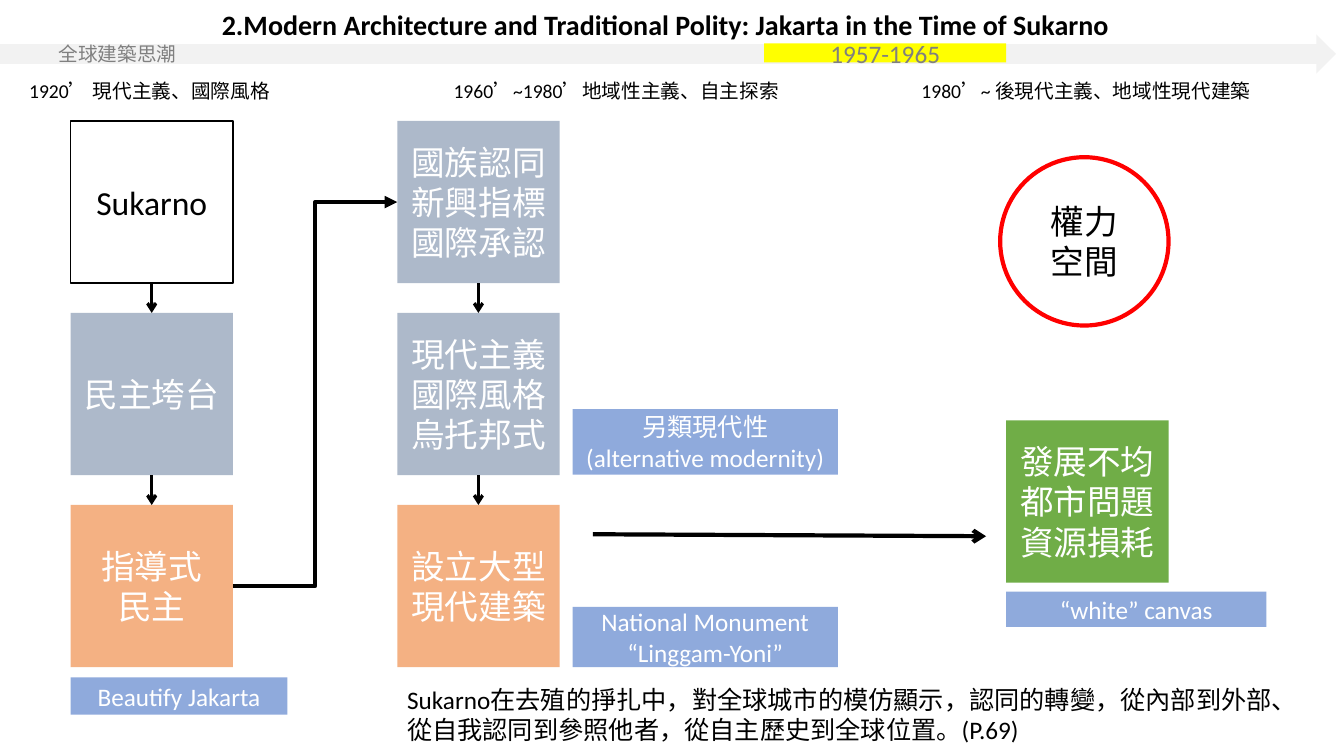
from lxml.etree import SubElement
from pptx import Presentation
from pptx.dml.color import RGBColor
from pptx.enum.shapes import MSO_CONNECTOR, MSO_SHAPE
from pptx.enum.text import MSO_ANCHOR, MSO_AUTO_SIZE, PP_ALIGN
from pptx.oxml.ns import qn
from pptx.util import Inches, Pt

COLORS = {
    "black": "000000", "white": "FFFFFF", "grey": "808080", "band": "F2F2F2",
    "yellow": "FFFF00", "slate": "ADB9CA", "orange": "F4B183",
    "green": "70AD47", "blue": "8FAADC", "red": "FF0000",
}

# Grid of square boxes, in inches
BOX, GAP = 1.61, 0.295
COLS = [0.7, 3.94, 9.98]
ROWS = [1.2 + i * (BOX + GAP) for i in range(3)]
NOTE_X = 5.68
NOTE_W = 2.63
BOTTOM, TOP, LEFT, RIGHT = 2, 0, 1, 3


def rgb(name):
    return RGBColor.from_string(COLORS[name])


def apply(obj, formats):
    for name, value in formats.items():
        setattr(obj, name, value)


def write(tf, lines, size, color, align=PP_ALIGN.LEFT, bold=False, **frame):
    """Fill a text frame, one paragraph per line."""
    apply(tf, {"word_wrap": True, **frame})
    for i, line in enumerate(lines.split("\n")):
        p = tf.paragraphs[0] if i == 0 else tf.add_paragraph()
        p.alignment = align
        r = p.add_run()
        r.text = line
        apply(r.font, {"name": "Calibri", "size": Pt(size), "bold": bold})
        r.font.color.rgb = rgb(color)


def add_block(slide, at, text, fill=None, line=None, width=1, size=24,
              color="white", kind=MSO_SHAPE.RECTANGLE,
              align=PP_ALIGN.CENTER, **frame):
    sp = slide.shapes.add_shape(kind, *map(Inches, at))
    sp.shadow.inherit = False
    if fill:
        sp.fill.solid()
        sp.fill.fore_color.rgb = rgb(fill)
    else:
        sp.fill.background()
    if line:
        sp.line.color.rgb = rgb(line)
        sp.line.width = Pt(width)
    else:
        sp.line.fill.background()
    write(sp.text_frame, text, size, color, align,
          vertical_anchor=MSO_ANCHOR.MIDDLE, **frame)
    return sp


def add_box(slide, col, top, text, fill=None, **style):
    return add_block(slide, (COLS[col], top, BOX, BOX), text, fill, **style)


def add_note(slide, at, text):
    return add_block(slide, at, text, "blue", size=18)


def add_label(slide, at, text, size):
    sp = slide.shapes.add_textbox(*map(Inches, at))
    write(sp.text_frame, text, size, "black")


def add_arrow(slide, start=(0, 0), end=(0, 0), width=2.25, head="arrow",
              kind=MSO_CONNECTOR.STRAIGHT):
    cx = slide.shapes.add_connector(kind, *map(Inches, (*start, *end)))
    cx.line.color.rgb = rgb("black")
    cx.line.width = Pt(width)
    SubElement(cx.line._get_or_add_ln(), qn("a:tailEnd"), type=head)
    SubElement(cx._element.spPr, qn("a:effectLst"))
    return cx


def join(slide, first, site, second, end_site, **style):
    cx = add_arrow(slide, **style)
    cx.begin_connect(first, site)
    cx.end_connect(second, end_site)


def add_title(slide, text):
    sp = slide.shapes.title
    apply(sp, {"left": Inches(2.1), "top": Inches(0.02),
               "width": Inches(9.14), "height": Inches(0.44)})
    write(sp.text_frame, text, 20, "black", bold=True, word_wrap=False,
          auto_size=MSO_AUTO_SIZE.NONE, vertical_anchor=MSO_ANCHOR.TOP)


def add_timeline(slide):
    add_block(slide, (0, 0.34, 13.25, 0.39), "全球建築思潮", "band", size=14,
              color="grey", kind=MSO_SHAPE.RIGHT_ARROW,
              align=PP_ALIGN.LEFT, margin_left=Inches(0.58))
    for left, width, text in [
        (0.19, 3.12, "1920’ 現代主義、國際風格"),
        (4.4, 4.02, "1960’~1980’地域性主義、自主探索"),
        (9.04, 4.21, "1980’~ 後現代主義、地域性現代建築"),
    ]:
        add_label(slide, (left, 0.73, width, 0.34), text, 14)
    add_block(slide, (7.58, 0.43, 2.4, 0.19), "1957-1965", "yellow",
              size=18, color="grey")


def add_flow(slide):
    # Two columns of three boxes, each column joined downwards
    columns = [
        [("Sukarno", None, {"line": "black", "color": "black"}),
         ("民主垮台", "slate", {}),
         ("指導式\n民主", "orange", {})],
        [("國族認同\n新興指標\n國際承認", "slate", {}),
         ("現代主義\n國際風格\n烏托邦式", "slate", {}),
         ("設立大型\n現代建築", "orange", {})],
    ]
    boxes = [[add_box(slide, col, top, text, fill, **style)
              for top, (text, fill, style) in zip(ROWS, column)]
             for col, column in enumerate(columns)]
    for column in boxes:
        for upper, lower in zip(column, column[1:]):
            join(slide, upper, BOTTOM, lower, TOP)
    join(slide, boxes[0][-1], RIGHT, boxes[1][0], LEFT, width=3,
         head="triangle", kind=MSO_CONNECTOR.ELBOW)


def add_outcome(slide):
    add_block(slide, (9.92, 1.56, 1.67, 1.67), "權力\n空間", line="red",
              width=3, color="black", kind=MSO_SHAPE.OVAL)
    add_box(slide, 2, 4.17, "發展不均\n都市問題\n資源損耗", "green")
    add_arrow(slide, (5.88, 5.3), (9.78, 5.32), width=3)


def main():
    prs = Presentation()
    apply(prs, {"slide_width": Inches(13.33), "slide_height": Inches(7.5)})
    slide = prs.slides.add_slide(prs.slide_layouts[5])

    add_title(slide, "2.Modern Architecture and Traditional Polity: "
                     "Jakarta in the Time of Sukarno")
    add_timeline(slide)
    add_flow(slide)
    add_outcome(slide)

    # Notes beside and below the boxes
    add_note(slide, (NOTE_X, 4.06, NOTE_W, 0.65),
             "另類現代性\n(alternative modernity)")
    add_note(slide, (NOTE_X, 6.02, NOTE_W, 0.6),
             "National Monument\n“Linggam-Yoni”")
    add_note(slide, (COLS[0], 6.72, 2.15, 0.37), "Beautify Jakarta")
    add_note(slide, (COLS[2], 5.87, 2.58, 0.35), "“white” canvas")

    # Conclusion
    add_label(slide, (COLS[1], 6.74, 9.2, 0.71),
              "Sukarno在去殖的掙扎中，對全球城市的模仿顯示，認同的轉變，"
              "從內部到外部、從自我認同到參照他者，從自主歷史到全球位置。(P.69)",
              18)
    prs.save("out.pptx")


if __name__ == "__main__":
    main()
